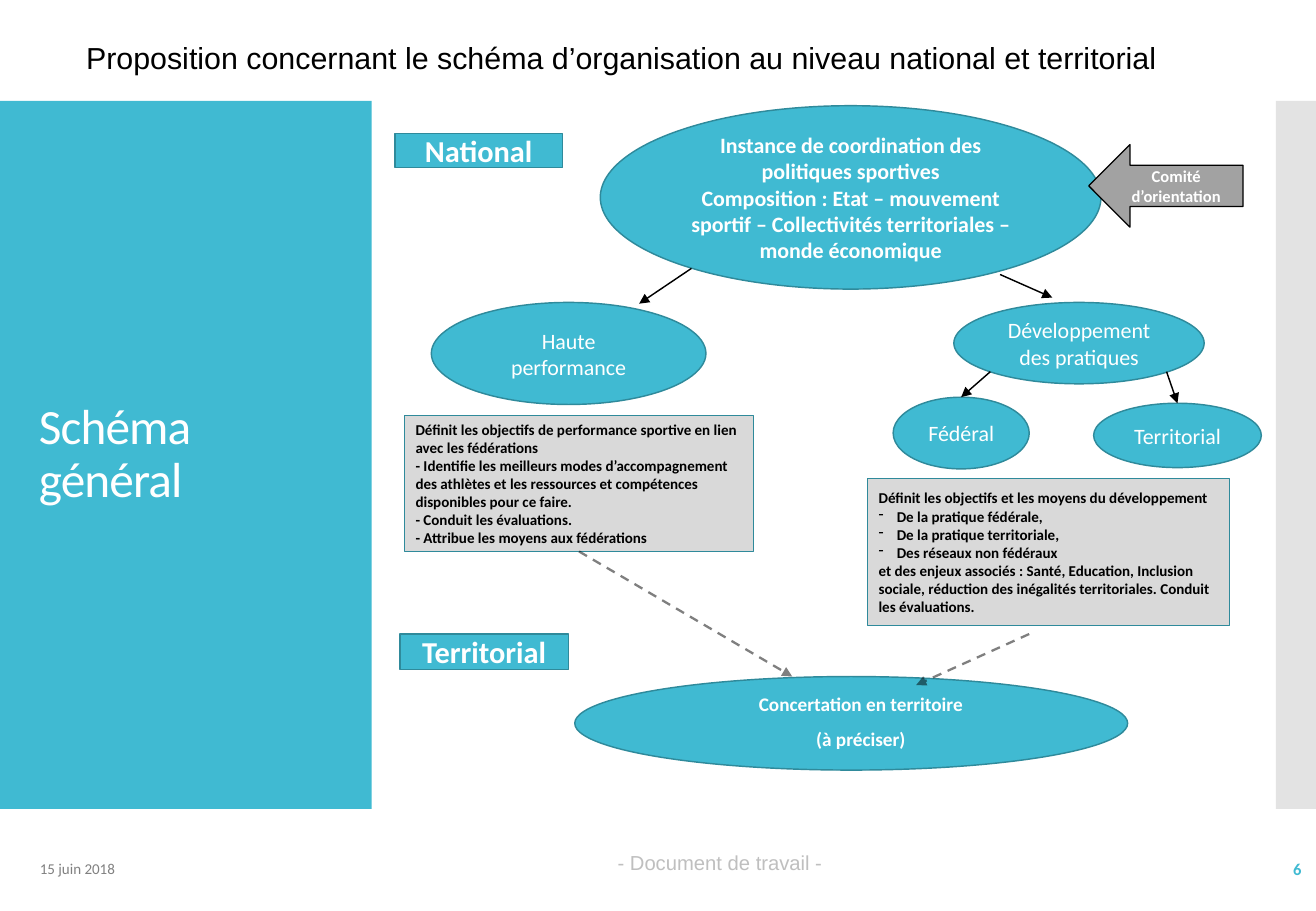
from lxml.etree import SubElement
from pptx import Presentation
from pptx.dml.color import RGBColor
from pptx.enum.dml import MSO_LINE
from pptx.enum.shapes import MSO_CONNECTOR, MSO_SHAPE
from pptx.enum.text import MSO_ANCHOR, MSO_AUTO_SIZE, PP_ALIGN
from pptx.oxml import parse_xml
from pptx.oxml.ns import nsdecls, qn
from pptx.util import Emu, Pt

EMU_PER_PX = 9144  # 100 px to the inch

TEAL = RGBColor(0x40, 0xBA, 0xD2)
DARK_TEAL = RGBColor(0x2F, 0x8A, 0x9B)
WHITE = RGBColor(0xFF, 0xFF, 0xFF)
BLACK = RGBColor(0x00, 0x00, 0x00)
SIDE_GREY = RGBColor(0xC8, 0xC8, 0xC8)
ARROW_GREY = RGBColor(0xA2, 0xA2, 0xA2)
BOX_GREY = RGBColor(0xD9, 0xD9, 0xD9)
FOOTER_GREY = RGBColor(0xBF, 0xBF, 0xBF)
DATE_GREY = RGBColor(0x80, 0x80, 0x80)


def px(length):
    return Emu(length * EMU_PER_PX)


def write_text(shape, *texts, size, color=WHITE, bold=False, font="Calibri",
               align=PP_ALIGN.CENTER, anchor=MSO_ANCHOR.MIDDLE, margin=10,
               line_spacing=None, space_before=0):
    """Fill the shape with one paragraph per text, all in the same format."""
    frame = shape.text_frame
    frame.auto_size = MSO_AUTO_SIZE.NONE
    frame.word_wrap = True
    frame.vertical_anchor = anchor
    frame.margin_left = frame.margin_right = px(margin)
    frame.margin_top = frame.margin_bottom = px(5)
    for index, text in enumerate(texts):
        paragraph = frame.add_paragraph() if index else frame.paragraphs[0]
        paragraph.alignment = align
        paragraph.space_before = Pt(space_before)
        if line_spacing:
            paragraph.line_spacing = line_spacing
        run = paragraph.add_run()
        run.text = text
        run.font.name = font
        run.font.size = Pt(size)
        run.font.bold = bold
        run.font.color.rgb = color


def set_indent(paragraph, left, first, bullet=None):
    properties = paragraph._p.get_or_add_pPr()
    properties.set("marL", str(px(left)))
    properties.set("indent", str(px(first)))
    if bullet:
        SubElement(properties, qn("a:buChar")).set("char", bullet)
    else:
        SubElement(properties, qn("a:buNone"))


def set_opacity(element, percent):
    color = next(element.iter(qn("a:srgbClr")))
    SubElement(color, qn("a:alpha")).set("val", str(percent * 1000))


def paint(shape, fill, line=None, width=0.85):
    shape.fill.solid()
    shape.fill.fore_color.rgb = fill
    if line is None:
        shape.line.fill.background()
    else:
        shape.line.color.rgb = line
        shape.line.width = Pt(width)


def add_figure(slide, kind, box, fill=TEAL, line=DARK_TEAL, width=0.85):
    shape = slide.shapes.add_shape(kind, *map(px, box))
    shape.shadow.inherit = False
    paint(shape, fill, line, width)
    return shape


def add_label(slide, kind, box, *texts, size=13, **text_format):
    shape = add_figure(slide, kind, box)
    write_text(shape, *texts, size=size, **text_format)
    return shape


def add_details(slide, box, *texts):
    shape = add_figure(slide, MSO_SHAPE.RECTANGLE, box, BOX_GREY)
    write_text(shape, *texts, size=8.9, color=BLACK, bold=True,
               align=PP_ALIGN.LEFT, margin=9)
    return shape


def add_caption(slide, box, text, **text_format):
    write_text(slide.shapes.add_textbox(*map(px, box)), text, **text_format)


def add_arrow(slide, start, end, source=None, target=None, dashed=False):
    """Draw an arrow, joined to the bottom of source and the top of target."""
    arrow = slide.shapes.add_connector(MSO_CONNECTOR.STRAIGHT, *map(px, start + end))
    if source is not None:
        arrow.begin_connect(source, 2)
    if target is not None:
        arrow.end_connect(target, 0)
    arrow.line.color.rgb = BLACK
    arrow.line.width = Pt(1.35 if dashed else 0.85)
    properties = arrow.element.spPr
    if dashed:
        arrow.line.dash_style = MSO_LINE.DASH
        set_opacity(properties, 50)
    SubElement(properties.find(qn("a:ln")), qn("a:tailEnd")).set("type", "triangle")
    SubElement(properties, qn("a:effectLst"))


def place(placeholder, box):
    placeholder.left, placeholder.top, placeholder.width, placeholder.height = map(px, box)


def fill_title(slide):
    title = slide.shapes.title
    place(title, (22, 123, 262, 503))
    write_text(title, "Schéma général", size=29.2, align=PP_ALIGN.LEFT, line_spacing=0.9)
    for properties in title.element.iter(qn("a:rPr")):
        properties.set("spc", "-50")


def fill_concertation(slide):
    body = slide.placeholders[1]
    place(body, (473, 557, 455, 77))
    ellipse = parse_xml(f'<a:prstGeom {nsdecls("a")} prst="ellipse"><a:avLst/></a:prstGeom>')
    body.element.spPr.find(qn("a:xfrm")).addnext(ellipse)
    paint(body, TEAL, DARK_TEAL)
    write_text(body, "Concertation en territoire", "(à préciser)", size=11.4,
               bold=True, line_spacing=0.8, space_before=9.8)
    for paragraph in body.text_frame.paragraphs:
        set_indent(paragraph, 16, 0)


def add_frame(slide):
    panel = add_figure(slide, MSO_SHAPE.RECTANGLE, (0, 83, 306, 583), line=None)
    side = add_figure(slide, MSO_SHAPE.RECTANGLE, (1050, 83, 33, 583), SIDE_GREY, None)
    set_opacity(side.element.spPr, 50)
    for shape in (panel, side):
        slide.shapes.title.element.addprevious(shape.element)
    add_caption(slide, (61, 27, 968, 40),
                "Proposition concernant le schéma d’organisation au niveau national et territorial",
                size=18, color=BLACK, font="Arial", align=PP_ALIGN.LEFT, anchor=MSO_ANCHOR.TOP)
    add_caption(slide, (368, 695, 449, 30), "- Document de travail -", size=12,
                color=FOOTER_GREY, font="Arial", anchor=MSO_ANCHOR.TOP)
    add_caption(slide, (23, 695, 244, 40), "15 juin 2018", size=8.9,
                color=DATE_GREY, align=PP_ALIGN.LEFT)
    add_caption(slide, (945, 695, 136, 40), "6", size=9.8, color=TEAL, bold=True,
                align=PP_ALIGN.RIGHT)


def add_diagram(slide):
    add_label(slide, MSO_SHAPE.RECTANGLE, (325, 110, 138, 28), "National", size=18, bold=True)
    add_label(slide, MSO_SHAPE.RECTANGLE, (329, 522, 139, 29), "Territorial", size=18, bold=True)
    add_label(slide, MSO_SHAPE.OVAL, (494, 87, 412, 151),
              "Instance de coordination des politiques sportives",
              "Composition : Etat – mouvement sportif – Collectivités territoriales – "
              "monde économique", bold=True)
    committee = add_figure(slide, MSO_SHAPE.LEFT_ARROW, (896, 119, 127, 68),
                           ARROW_GREY, BLACK, 0.75)
    write_text(committee, "Comité d’orientation", size=9.8, bold=True)

    add_label(slide, MSO_SHAPE.OVAL, (355, 249, 226, 84), "Haute performance")
    add_label(slide, MSO_SHAPE.OVAL, (785, 249, 206, 67), "Développement des pratiques")
    federal = add_label(slide, MSO_SHAPE.OVAL, (735, 327, 112, 59), "Fédéral")
    territorial = add_label(slide, MSO_SHAPE.OVAL, (900, 332, 138, 53), "Territorial")

    performance = add_details(
        slide, (333, 342, 287, 112),
        "Définit les objectifs de performance sportive en lien avec les fédérations",
        "- Identifie les meilleurs modes d’accompagnement des athlètes et les ressources "
        "et compétences disponibles pour ce faire.",
        "- Conduit les évaluations.",
        "- Attribue les moyens aux fédérations")
    development = add_details(
        slide, (714, 394, 298, 121),
        "Définit les objectifs et les moyens du développement",
        "De la pratique fédérale,",
        "De la pratique territoriale,",
        "Des réseaux non fédéraux",
        "et des enjeux associés : Santé, Education, Inclusion sociale, réduction des "
        "inégalités territoriales. Conduit les évaluations.")
    for paragraph in development.text_frame.paragraphs[1:4]:
        set_indent(paragraph, 15, -15, "-")

    add_arrow(slide, (569, 221), (526, 250))
    add_arrow(slide, (823, 226), (866, 245))
    add_arrow(slide, (815, 306), (791, 327), target=federal)
    add_arrow(slide, (960, 306), (969, 332), target=territorial)
    add_arrow(slide, (847, 522), (754, 564), dashed=True)
    add_arrow(slide, (477, 454), (652, 557), source=performance, dashed=True)


def main():
    presentation = Presentation()
    presentation.slide_width = px(1083)
    presentation.slide_height = px(750)
    slide = presentation.slides.add_slide(presentation.slide_layouts[1])
    fill_title(slide)
    fill_concertation(slide)
    add_frame(slide)
    add_diagram(slide)
    presentation.save("out.pptx")


if __name__ == "__main__":
    main()
